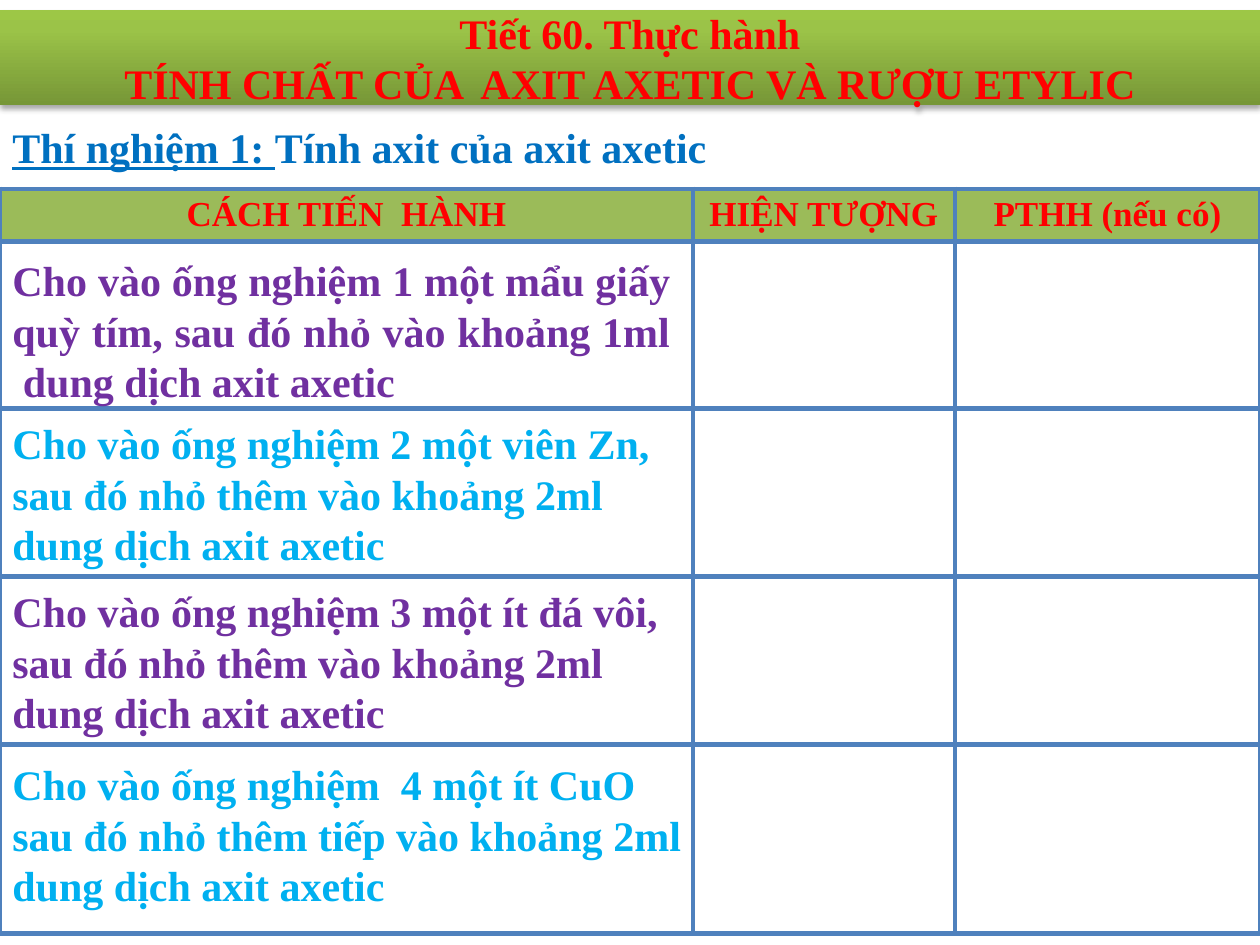
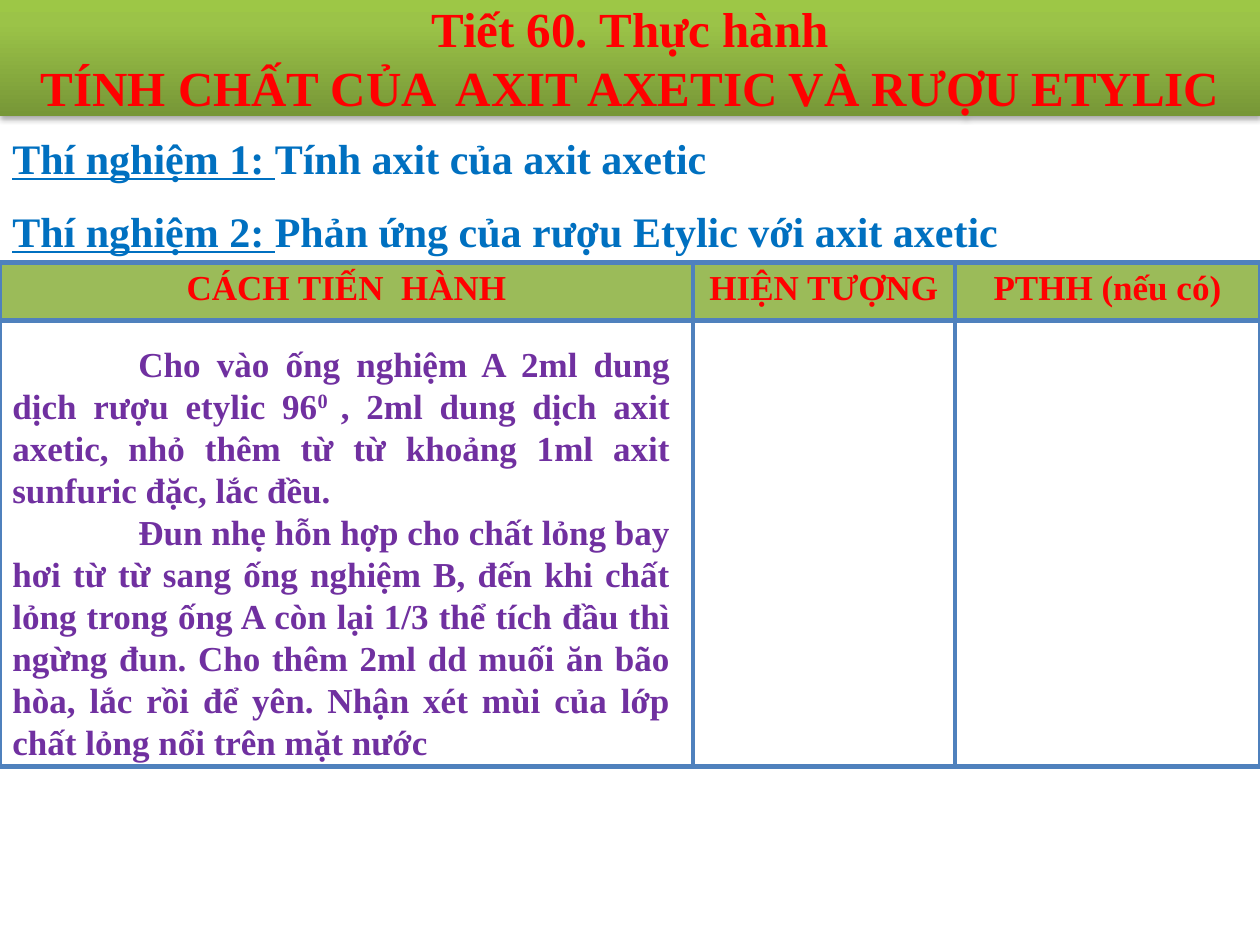
from lxml import etree
from pptx import Presentation
from pptx.dml.color import RGBColor
from pptx.enum.text import MSO_ANCHOR, MSO_AUTO_SIZE, PP_ALIGN
from pptx.oxml import parse_xml
from pptx.util import Cm, Pt

LEFT, CENTER, JUSTIFY = PP_ALIGN.LEFT, PP_ALIGN.CENTER, PP_ALIGN.JUSTIFY
TOP, MIDDLE = MSO_ANCHOR.TOP, MSO_ANCHOR.MIDDLE
NO_AUTOFIT = MSO_AUTO_SIZE.NONE

RED = RGBColor(0xFF, 0x00, 0x00)
BLUE = RGBColor(0x00, 0x70, 0xC0)
PURPLE = RGBColor(0x70, 0x30, 0xA0)
SKY = RGBColor(0x00, 0xB0, 0xF0)
HEADER_GREEN = RGBColor(0x9B, 0xBB, 0x59)
BORDER_BLUE = RGBColor(0x4F, 0x81, 0xBD)
BAND_STOPS = [(0, RGBColor(0x77, 0x97, 0x37)),
              (80, RGBColor(0x9B, 0xC3, 0x48)),
              (100, RGBColor(0x9D, 0xC7, 0x46))]

FONT = "Times New Roman"
A_NS = "http://schemas.openxmlformats.org/drawingml/2006/main"
PAGE_WIDTH, PAGE_HEIGHT = Cm(25.4), Cm(19.05)
COLUMN_WIDTHS = [Cm(13.97), Cm(5.28), Cm(6.15)]

LESSON_TITLE = "Tiết 60. Thực hành\vTÍNH CHẤT CỦA  AXIT AXETIC VÀ RƯỢU ETYLIC"
TABLE_HEADERS = ["CÁCH TIẾN  HÀNH", "HIỆN TƯỢNG", "PTHH (nếu có)"]
ACID_HEADING = ("Thí nghiệm 1: ", "Tính axit của axit axetic")
ESTER_HEADING = ("Thí nghiệm 2: ", "Phản ứng của rượu Etylic với axit axetic")

# text, colour, alignment, top, width, height
ACID_STEPS = [
    ("Cho vào ống nghiệm 1 một mẩu giấy quỳ tím, sau đó nhỏ vào khoảng 1ml"
     "  dung dịch axit axetic", PURPLE, JUSTIFY, 5.5, 13.76, 2.33),
    ("Cho vào ống nghiệm 2 một viên Zn, sau đó nhỏ thêm vào khoảng 2ml "
     "dung dịch axit axetic", SKY, LEFT, 8.68, 13.97, 2.54),
    ("Cho vào ống nghiệm 3 một ít đá vôi, sau đó nhỏ thêm vào khoảng 2ml "
     "dung dịch axit axetic", PURPLE, LEFT, 12.06, 14.18, 2.54),
    ("Cho vào ống nghiệm  4 một ít CuO sau đó nhỏ thêm tiếp vào khoảng 2ml "
     "dung dịch axit axetic", SKY, LEFT, 15.45, 14.18, 2.75),
]
MIX_STEP = ("Cho vào ống nghiệm A 2ml dung dịch rượu etylic 96", "0 ",
            ", 2ml dung dịch axit axetic, nhỏ thêm từ từ khoảng 1ml axit "
            "sunfuric đặc, lắc đều.")
HEAT_STEP = ("Đun nhẹ hỗn hợp cho chất lỏng bay hơi từ từ sang ống nghiệm B, "
             "đến khi chất lỏng trong ống A còn lại 1/3 thể tích đầu thì ngừng "
             "đun. Cho thêm 2ml dd muối ăn bão hòa, lắc rồi để yên. Nhận xét "
             "mùi của lớp chất lỏng nổi trên mặt nước",)


def style_paragraph(para, size, color, align=LEFT):
    para.alignment = align
    font = para.font
    font.name, font.size, font.bold = FONT, Pt(size), True
    font.color.rgb = color


def add_band_effects(band):
    """Give the title band its green gradient and soft shadow."""
    stops = "".join(f'<a:gs pos="{percent * 1000}"><a:srgbClr val="{color}"/></a:gs>'
                    for percent, color in BAND_STOPS)
    properties = band._element.spPr
    properties.append(parse_xml(
        f'<a:gradFill xmlns:a="{A_NS}" rotWithShape="1"><a:gsLst>{stops}</a:gsLst>'
        '<a:lin ang="16200000" scaled="0"/></a:gradFill>'))
    properties.append(parse_xml(
        f'<a:effectLst xmlns:a="{A_NS}"><a:outerShdw blurRad="{Pt(3.1)}" '
        f'dist="{Pt(1.8)}" dir="5400000" rotWithShape="0"><a:srgbClr val="000000">'
        '<a:alpha val="35000"/></a:srgbClr></a:outerShdw></a:effectLst>'))


def add_titled_page(deck, top, height, size):
    page = deck.slides.add_slide(deck.slide_layouts[5])
    band = page.shapes.title
    band.left, band.top, band.width, band.height = 0, top, PAGE_WIDTH, height
    add_band_effects(band)
    frame = band.text_frame
    frame.text = LESSON_TITLE
    frame.auto_size, frame.vertical_anchor = NO_AUTOFIT, MIDDLE
    style_paragraph(frame.paragraphs[0], size, RED, CENTER)
    return page


def add_text_frame(page, top, width, height, anchor=TOP):
    box = page.shapes.add_textbox(0, top, width, height)
    frame = box.text_frame
    frame.word_wrap, frame.vertical_anchor = True, anchor
    return frame


def add_heading(page, top, heading):
    para = add_text_frame(page, top, PAGE_WIDTH, Cm(1.27)).paragraphs[0]
    style_paragraph(para, 24, BLUE)
    para.space_before = Pt(2.5)
    for text, underlined in zip(heading, (True, False)):
        span = para.add_run()
        span.text = text
        span.font.underline = underlined


def add_step(page, text, color, align, top, width, height):
    frame = add_text_frame(page, Cm(top), Cm(width), Cm(height), MIDDLE)
    frame.text = text
    style_paragraph(frame.paragraphs[0], 24, color, align)


def add_procedure(page, top, width, height, steps):
    """Add justified, first-line-indented steps; a step's second part is raised."""
    frame = add_text_frame(page, top, width, height)
    for number, parts in enumerate(steps):
        para = frame.add_paragraph() if number else frame.paragraphs[0]
        style_paragraph(para, 20, PURPLE, JUSTIFY)
        para._p.get_or_add_pPr().set("indent", str(Cm(2.54)))
        for position, text in enumerate(parts):
            span = para.add_run()
            span.text = text
            if position == 1:
                span.font._element.set("baseline", "30000")


def add_cell_borders(cell):
    properties = cell._tc.get_or_add_tcPr()
    for side in "LRTB":
        line = etree.SubElement(properties, f"{{{A_NS}}}ln{side}", w=str(Pt(3)))
        fill = etree.SubElement(line, f"{{{A_NS}}}solidFill")
        etree.SubElement(fill, f"{{{A_NS}}}srgbClr", val=str(BORDER_BLUE))


def add_report_table(page, top, row_heights):
    table = page.shapes.add_table(len(row_heights), len(TABLE_HEADERS), 0, top,
                                  PAGE_WIDTH, sum(row_heights)).table
    table.horz_banding = False
    for column, width in zip(table.columns, COLUMN_WIDTHS):
        column.width = width
    for row, height in zip(table.rows, row_heights):
        row.height = height
    for cell in table.iter_cells():
        add_cell_borders(cell)
        cell.fill.background()
    for cell, header in zip(table.rows[0].cells, TABLE_HEADERS):
        cell.fill.solid()
        cell.fill.fore_color.rgb = HEADER_GREEN
        cell.text = header
        style_paragraph(cell.text_frame.paragraphs[0], 20, RED, CENTER)


def build_acid_page(deck):
    page = add_titled_page(deck, Cm(0.21), Cm(1.9), 24)
    add_report_table(page, Cm(3.81),
                     [Cm(1.06), Cm(3.36), Cm(3.39), Cm(3.39), Cm(3.81)])
    add_heading(page, Cm(2.33), ACID_HEADING)
    for step in ACID_STEPS:
        add_step(page, *step)


def build_ester_page(deck):
    page = add_titled_page(deck, 0, Cm(2.33), 28)
    add_heading(page, Cm(2.54), ACID_HEADING)
    add_heading(page, Cm(4.02), ESTER_HEADING)
    add_report_table(page, Cm(5.29), [Cm(1.17), Cm(8.99)])
    add_procedure(page, Cm(6.77), Cm(13.76), Cm(8.81), [MIX_STEP, HEAT_STEP])


def main():
    deck = Presentation()
    deck.slide_width, deck.slide_height = PAGE_WIDTH, PAGE_HEIGHT
    build_acid_page(deck)
    build_ester_page(deck)
    deck.save("out.pptx")


if __name__ == "__main__":
    main()
